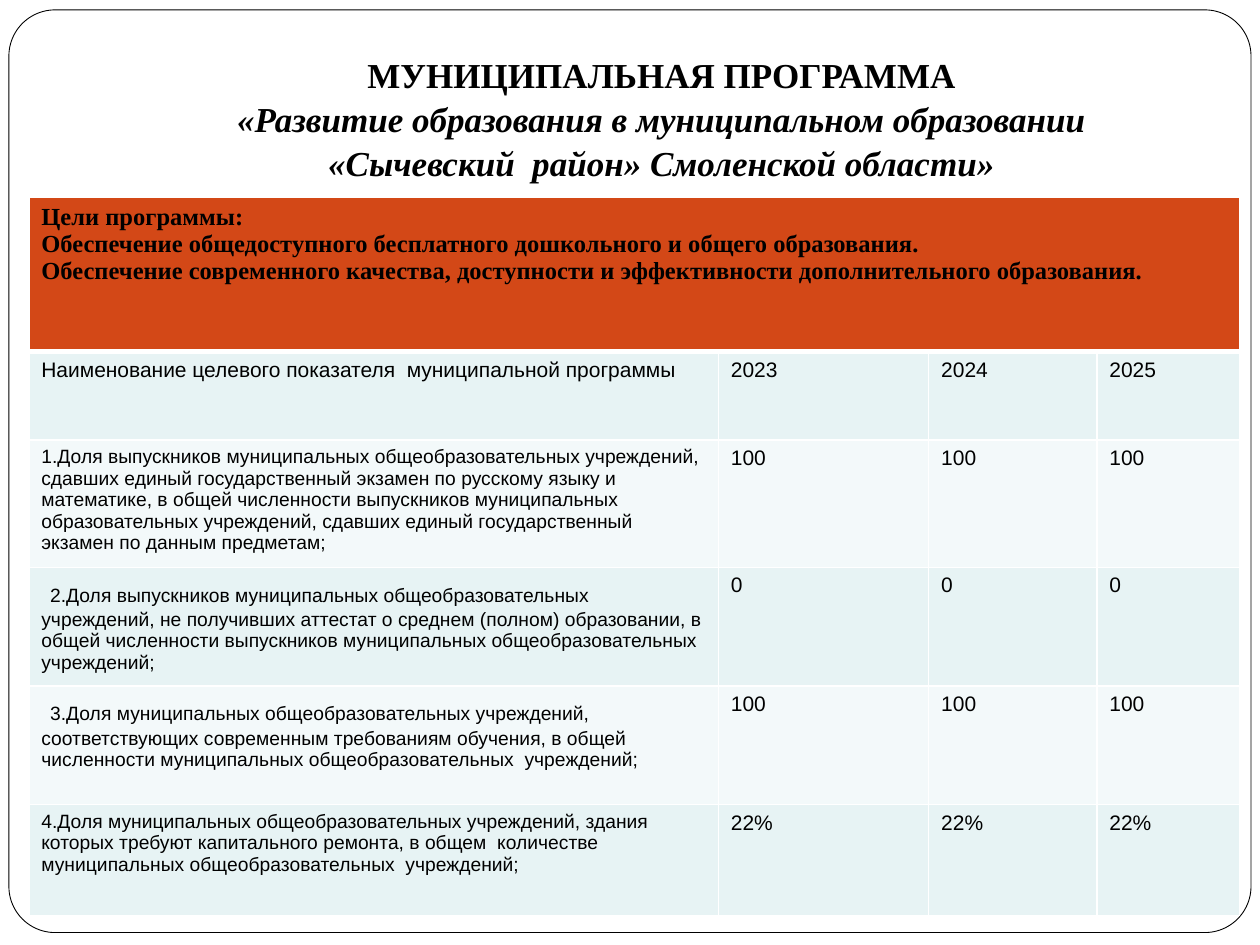
import pptx
import pptx.dml.color
import pptx.enum.shapes
import pptx.enum.text
import pptx.oxml
import pptx.oxml.ns
import pptx.util

Cm, Pt = pptx.util.Cm, pptx.util.Pt


def color(hex_text):
    return pptx.dml.color.RGBColor.from_string(hex_text)


def write(para, text, font="Arial", size=12, bold=False, italic=False):
    span = para.add_run()
    span.text = text
    span.font.name, span.font.size = font, Pt(size)
    span.font.bold, span.font.italic = bold, italic
    span.font.color.rgb = color("000000")


deck = pptx.Presentation()
deck.slide_width, deck.slide_height = Cm(25.4), Cm(19.05)
page = deck.slides.add_slide(deck.slide_layouts[5])

# Rounded frame behind everything
frame = page.shapes.add_shape(
    pptx.enum.shapes.MSO_SHAPE.ROUNDED_RECTANGLE,
    Cm(0.18), Cm(0.2), Cm(25.04), Cm(18.6))
frame.adjustments[0] = 0.05
frame.shadow.inherit = False
frame.fill.solid()
frame.fill.fore_color.rgb = color("FFFFFF")
frame.line.color.rgb = color("000000")
frame.line.width = Pt(0.5)
frame.element.getparent().insert(2, frame.element)

# Title
title = page.shapes.title
title.left, title.top, title.width, title.height = Cm(2.54), Cm(0.76), Cm(21.59), Cm(3.18)
box = title.text_frame
box.word_wrap = True
box.auto_size = pptx.enum.text.MSO_AUTO_SIZE.NONE
box.vertical_anchor = pptx.enum.text.MSO_ANCHOR.BOTTOM
box.margin_left = box.margin_right = box.margin_bottom = Cm(0.25)
box.margin_top = Cm(0.13)
para = box.paragraphs[0]
para.alignment = pptx.enum.text.PP_ALIGN.CENTER
para.line_spacing = 1.04
title_lines = [
    ("МУНИЦИПАЛЬНАЯ ПРОГРАММА", False),
    ("«Развитие образования в муниципальном образовании", True),
    ("«Сычевский  район» Смоленской области»", True),
]
for index, (text, italic) in enumerate(title_lines):
    if index:
        para.add_line_break()
    write(para, text, font="Times New Roman", size=20, bold=True, italic=italic)

# Table content
goals = [
    "Цели программы:",
    "Обеспечение общедоступного бесплатного дошкольного и общего образования.",
    "Обеспечение современного качества, доступности и эффективности дополнительного образования.",
]
indicators = [
    ("1.Доля выпускников муниципальных общеобразовательных учреждений, сдавших единый "
     "государственный экзамен по русскому языку и математике, в общей численности "
     "выпускников муниципальных образовательных учреждений, сдавших единый "
     "государственный экзамен по данным предметам;", "100"),
    (" 2.Доля выпускников муниципальных общеобразовательных учреждений, не получивших "
     "аттестат о среднем (полном) образовании, в общей численности выпускников "
     "муниципальных общеобразовательных  учреждений;", "0"),
    (" 3.Доля муниципальных общеобразовательных учреждений, соответствующих современным "
     "требованиям обучения, в общей численности муниципальных общеобразовательных  "
     "учреждений;", "100"),
    ("4.Доля муниципальных общеобразовательных учреждений, здания которых требуют "
     "капитального ремонта, в общем  количестве муниципальных общеобразовательных  "
     "учреждений;", "22%"),
]
widths = [13.9, 4.24, 3.39, 2.88]
heights = [3.12, 1.78, 2.57, 2.39, 2.39, 2.24]

# Table grid
table = page.shapes.add_table(
    len(heights), len(widths), Cm(0.58), Cm(3.97), Cm(sum(widths)), Cm(sum(heights))).table
for column, width in zip(table.columns, widths):
    column.width = Cm(width)
for row, height in zip(table.rows, heights):
    row.height = Cm(height)

# Cell fills and white borders, thicker under the heading row
for r, row in enumerate(table.rows):
    for cell in row.cells:
        cell.fill.solid()
        cell.fill.fore_color.rgb = color("D34817" if r == 0 else ("F3F9FA", "E7F3F4")[r % 2])
        properties = cell._tc.get_or_add_tcPr()
        for index, side in enumerate("LRTB"):
            thick = (r, side) in [(0, "B"), (1, "T")]
            properties.insert(index, pptx.oxml.parse_xml(
                f'<a:ln{side} {pptx.oxml.ns.nsdecls("a")} w="{Pt(3 if thick else 1)}">'
                '<a:solidFill><a:srgbClr val="FFFFFF"/></a:solidFill>'
                f'</a:ln{side}>'))

# Heading row with the goals
table.cell(0, 0).merge(table.cell(0, len(widths) - 1))
box = table.cell(0, 0).text_frame
for index, goal in enumerate(goals):
    para = box.add_paragraph() if index else box.paragraphs[0]
    write(para, goal, font="Times New Roman", size=14, bold=True)

# Column captions
captions = ["Наименование целевого показателя  муниципальной программы", "2023", "2024", "2025"]
for c, caption in enumerate(captions):
    write(table.cell(1, c).text_frame.paragraphs[0], caption)

# Indicators: a leading space is set larger than the text
for r, (name, value) in enumerate(indicators, start=2):
    para = table.cell(r, 0).text_frame.paragraphs[0]
    if name.startswith(" "):
        write(para, " ", size=18)
    write(para, name.lstrip(), size=11)
    for c in range(1, len(widths)):
        write(table.cell(r, c).text_frame.paragraphs[0], value)

deck.save("out.pptx")
